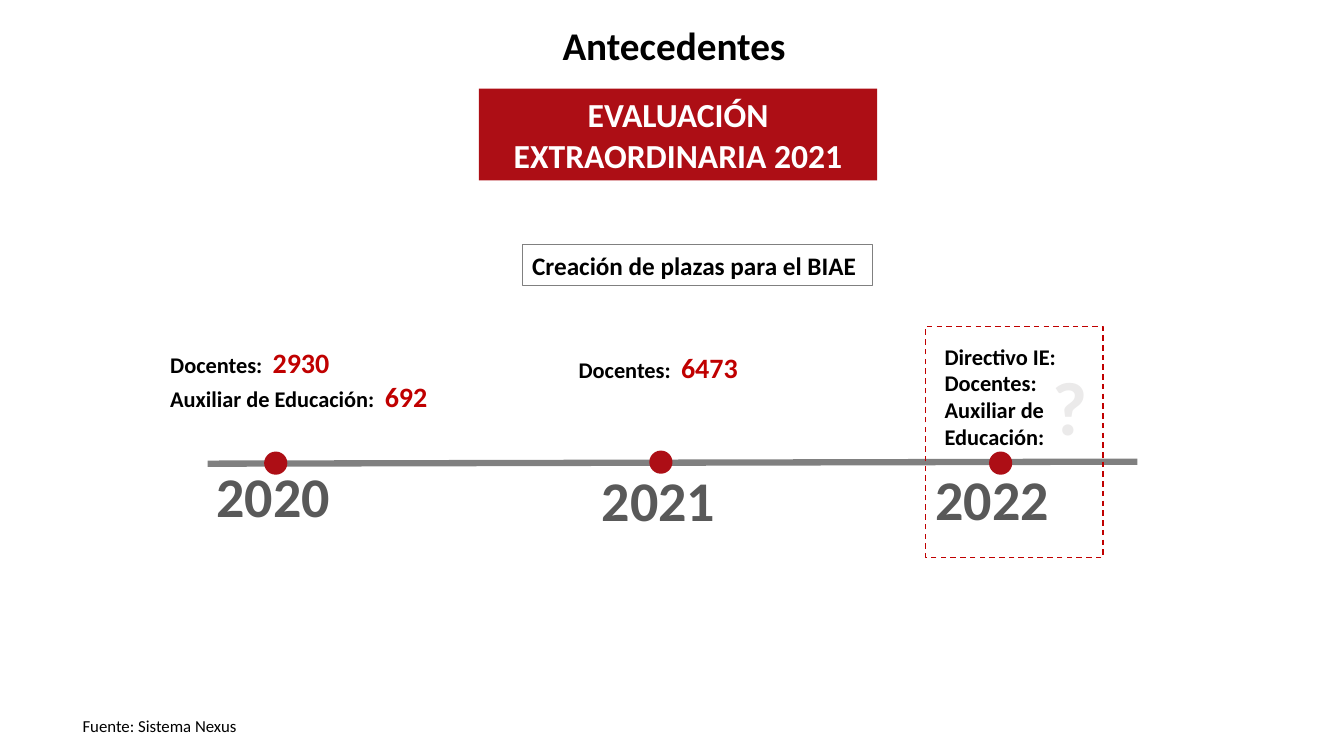
from lxml import etree
from pptx import Presentation
from pptx.dml.color import RGBColor
from pptx.enum.dml import MSO_LINE
from pptx.enum.shapes import MSO_CONNECTOR, MSO_SHAPE
from pptx.enum.text import MSO_ANCHOR, PP_ALIGN
from pptx.oxml.ns import qn
from pptx.util import Inches, Pt

RECTANGLE, OVAL = MSO_SHAPE.RECTANGLE, MSO_SHAPE.OVAL
LEFT, CENTER = PP_ALIGN.LEFT, PP_ALIGN.CENTER
TOP, MIDDLE = MSO_ANCHOR.TOP, MSO_ANCHOR.MIDDLE
STRAIGHT, DASH = MSO_CONNECTOR.STRAIGHT, MSO_LINE.DASH

FONT = "Calibri"
BLACK, WHITE, RED, FIGURE_RED = "000000", "FFFFFF", "AD0E15", "C00000"
YEAR_GRAY, LINE_GRAY, PALE_GRAY = "595959", "808080", "EBEAEA"
DOT_SIZE = 0.23

TITLE = "Antecedentes "
BANNER = "EVALUACIÓN EXTRAORDINARIA 2021"
SUBTITLE = "Creación de plazas para el BIAE"
SOURCE = "Fuente: Sistema Nexus"
QUESTION = "?"

YEARS = [
    ("2020", (2.05, 4.53), (2.62, 4.48)),
    ("2021", (5.87, 4.57), (6.44, 4.47)),
    ("2022", (9.18, 4.56), (9.81, 4.48)),
]
STAFF = [
    ((1.59, 3.38, 3.37, 0.95), [("Docentes:  ", "2930"), ("Auxiliar de Educación:  ", "692")]),
    ((5.64, 3.43, 2.05, 0.61), [("Docentes:  ", "6473")]),
]
PENDING = ["Directivo IE:", "Docentes:", "Auxiliar de Educación:"]


def rgb(color):
    return RGBColor.from_string(color)


def set_font(font, size, color, bold):
    font.name, font.size, font.bold = FONT, Pt(size), bold
    font.color.rgb = rgb(color)


def write(shape, lines, size, color=BLACK, bold=True, align=LEFT, anchor=TOP, wrap=True):
    frame = shape.text_frame
    frame.word_wrap = wrap
    frame.vertical_anchor = anchor
    for index, line in enumerate(lines):
        paragraph = frame.add_paragraph() if index else frame.paragraphs[0]
        paragraph.alignment = align
        if isinstance(line, str):
            paragraph.text = line
            set_font(paragraph.font, size, color, bold)
        else:
            label, figure = line
            for text, run_size, run_color in ((label, size, color), (figure, 20, FIGURE_RED)):
                run = paragraph.add_run()
                run.text = text
                set_font(run.font, run_size, run_color, bold)


def add_text(slide, box, lines, size, **style):
    write(slide.shapes.add_textbox(*map(Inches, box)), lines, size, **style)


def add_shape(slide, kind, box, fill=None, line=None, width=1):
    shape = slide.shapes.add_shape(kind, *map(Inches, box))
    shape.shadow.inherit = False
    if fill:
        shape.fill.solid()
        shape.fill.fore_color.rgb = rgb(fill)
    else:
        shape.fill.background()
    if line:
        shape.line.color.rgb = rgb(line)
        shape.line.width = Pt(width)
    else:
        shape.line.fill.background()
    return shape


def main():
    presentation = Presentation()
    presentation.slide_width, presentation.slide_height = Inches(13.33), Inches(7.5)
    slide = presentation.slides.add_slide(presentation.slide_layouts[6])

    add_text(slide, (3.46, 0.16, 6.54, 0.57), [TITLE], 28, align=CENTER)
    banner = add_shape(slide, RECTANGLE, (4.75, 0.88, 3.95, 0.91), fill=RED)
    write(banner, [BANNER], 24, color=WHITE, align=CENTER, anchor=MIDDLE)
    subtitle = add_shape(slide, RECTANGLE, (5.18, 2.43, 3.47, 0.4), line=LINE_GRAY, width=0.75)
    write(subtitle, [SUBTITLE], 18)

    timeline = slide.shapes.add_connector(STRAIGHT, *map(Inches, (2.06, 4.6, 11.28, 4.58)))
    timeline.line.color.rgb = rgb(LINE_GRAY)
    timeline.line.width = Pt(4.5)
    etree.SubElement(timeline._element.spPr, qn("a:effectLst"))

    frame = add_shape(slide, RECTANGLE, (9.18, 3.24, 1.76, 2.29), line=FIGURE_RED)
    frame.line.dash_style = DASH

    for box, lines in STAFF:
        add_text(slide, box, lines, 16)
    add_text(slide, (9.27, 3.35, 2.05, 1.35), PENDING, 16)
    add_text(slide, (10.34, 3.52, 0.55, 1.01), [QUESTION], 54,
             color=PALE_GRAY, align=CENTER, wrap=False)

    for year, label_position, dot_position in YEARS:
        add_text(slide, (*label_position, 2.92, 0.77), [year], 40, color=YEAR_GRAY)
        add_shape(slide, OVAL, (*dot_position, DOT_SIZE, DOT_SIZE), fill=RED)

    add_text(slide, (0.72, 7.05, 1.75, 0.3), [SOURCE], 12, bold=False, wrap=False)
    presentation.save("out.pptx")


if __name__ == "__main__":
    main()
